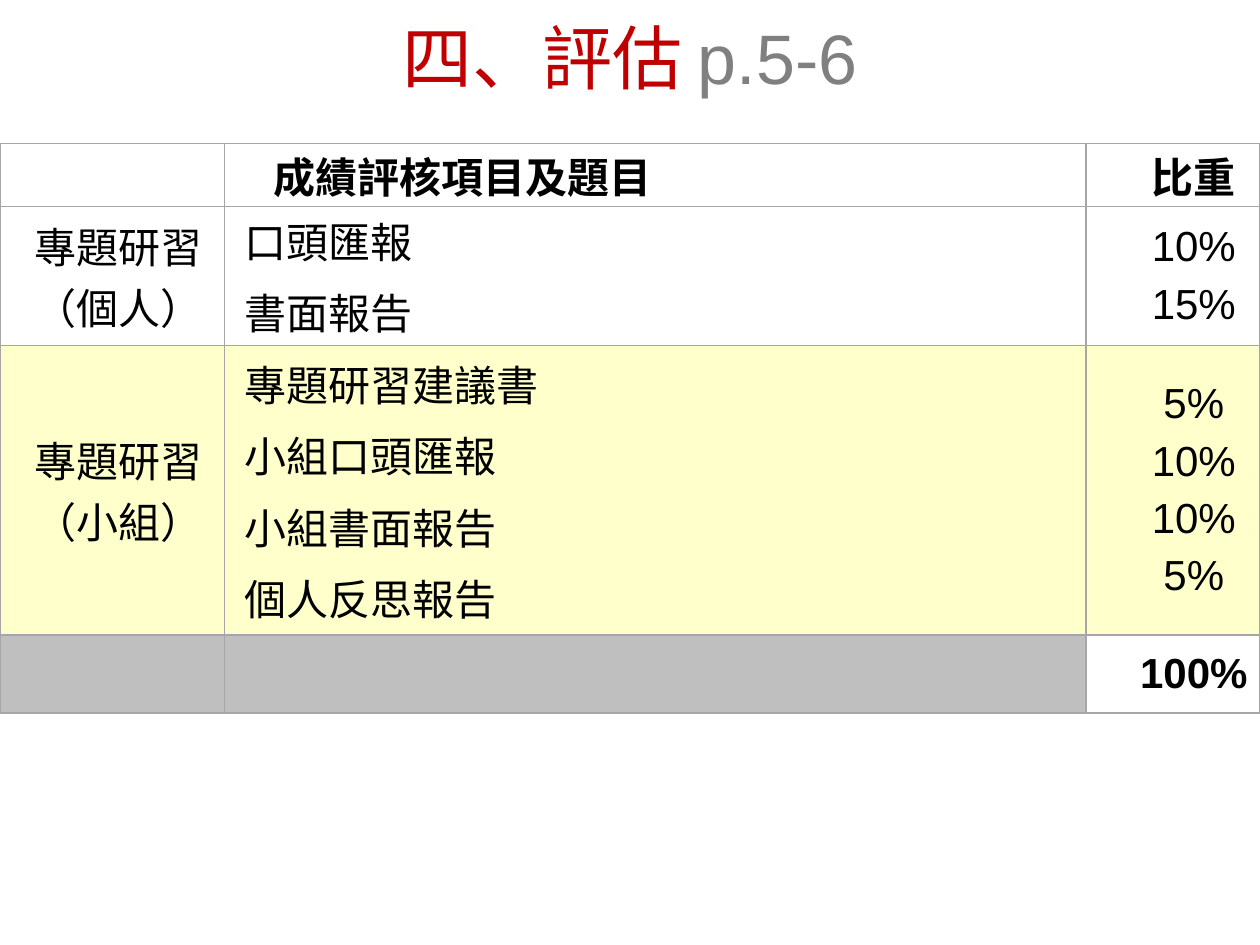
from pptx import Presentation, util as u
from pptx.dml.color import RGBColor
from pptx.enum import text
from pptx.oxml import parse_xml
from pptx.oxml.ns import nsdecls

THEME = dict(title="C00000", pages="808080", ink="000000", border="A6A6A6",
             plain="FFFFFF", group="FFFFCC", total="BFBFBF",
             title_size=40, body_size=24, latin="Arial", body="Calibri")
CENTER, LEFT = text.PP_ALIGN.CENTER, text.PP_ALIGN.LEFT
MIDDLE = text.MSO_ANCHOR.MIDDLE


def add_span(para, words, color, size, font, bold=False):
    span = para.add_run()
    span.text = words
    for name, value in dict(size=u.Pt(size), name=font, bold=bold).items():
        setattr(span.font, name, value)
    span.font.color.rgb = RGBColor.from_string(THEME[color])


def style_cell(cell, fill):
    props = cell._tc.get_or_add_tcPr()
    for side in ("lnL", "lnR", "lnT", "lnB"):
        props.append(parse_xml(
            f'<a:{side} {nsdecls("a")} w="{u.Pt(1)}"><a:solidFill>'
            f'<a:srgbClr val="{THEME["border"]}"/></a:solidFill></a:{side}>'))
    cell.fill.solid()
    cell.fill.fore_color.rgb = RGBColor.from_string(THEME[fill])
    margins = dict(margin_left=u.Inches(0.06), margin_right=u.Inches(0.06),
                   margin_top=0, margin_bottom=0, vertical_anchor=MIDDLE)
    for name, value in margins.items():
        setattr(cell, name, value)


deck = Presentation()
deck.slide_width, deck.slide_height = u.Inches(10), u.Inches(7.5)
page = deck.slides.add_slide(deck.slide_layouts[6])

# Title with page reference
box = page.shapes.add_textbox(0, u.Inches(0.08), deck.slide_width, u.Inches(0.75))
frame = box.text_frame
frame.word_wrap = True
frame.vertical_anchor = text.MSO_ANCHOR.BOTTOM
para = frame.paragraphs[0]
para.alignment = CENTER
for words, color in (("四、評估 ", "title"), ("p.5-6", "pages")):
    add_span(para, words, color, THEME["title_size"], THEME["latin"])

# Assessment table: category, items, weighting
columns = [1.78, 6.84, 1.38]
heights = [0.5, 1.1, 2.3, 0.62]
content = [
    [[], ["成績評核項目及題目"], ["比重"]],
    [["專題研習（個人）"], ["口頭匯報", "書面報告"], ["10%", "15%"]],
    [["專題研習（小組）"],
     ["專題研習建議書", "小組口頭匯報", "小組書面報告", "個人反思報告"],
     ["5%", "10%", "10%", "5%"]],
    [[], [], ["100%"]],
]
fills = [["plain"] * 3, ["plain"] * 3, ["group"] * 3, ["total", "total", "plain"]]

table = page.shapes.add_table(
    len(heights), len(columns), 0, u.Inches(1.14), deck.slide_width,
    u.Inches(sum(heights))).table
table.first_row = table.horz_banding = False
for column, width in zip(table.columns, columns):
    column.width = u.Inches(width)

for r, height in enumerate(heights):
    table.rows[r].height = u.Inches(height)
    outer = r in (0, len(heights) - 1)
    for c, lines in enumerate(content[r]):
        cell = table.cell(r, c)
        style_cell(cell, fills[r][c])
        for i, line in enumerate(lines):
            frame = cell.text_frame
            para = frame.add_paragraph() if i else frame.paragraphs[0]
            para.alignment = LEFT if c == 1 else CENTER
            para.space_before = u.Pt(6)
            indent = 0.33 if outer or c == 2 else 0.1
            para._p.get_or_add_pPr().set("marL", str(u.Inches(indent)))
            font = THEME["latin"] if c == 2 and r else THEME["body"]
            add_span(para, line, "ink", THEME["body_size"], font, bold=outer)

deck.save("out.pptx")
